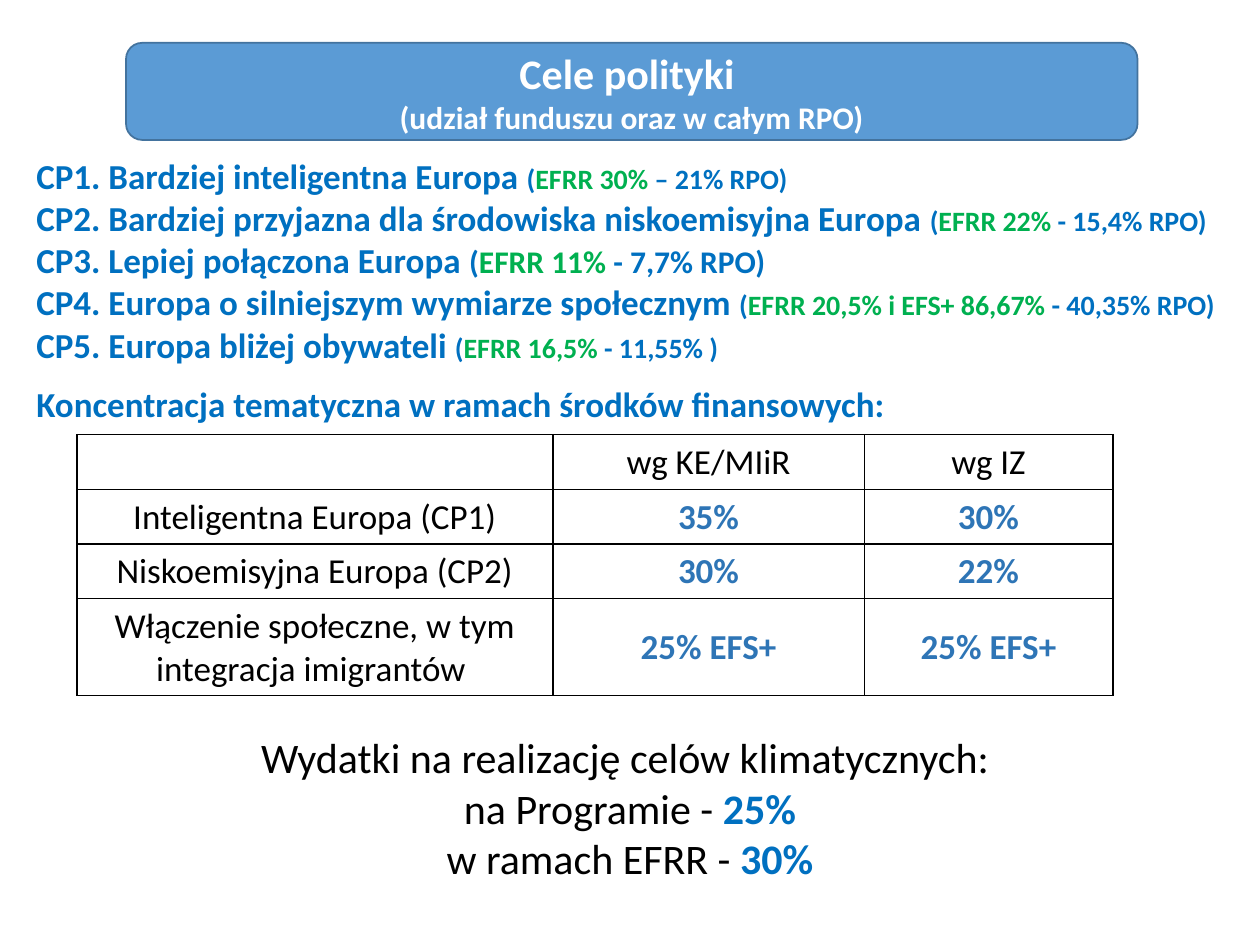
from dataclasses import dataclass

from lxml.etree import SubElement
from pptx import Presentation
from pptx.dml.color import RGBColor
from pptx.enum.shapes import MSO_SHAPE
from pptx.enum.text import MSO_ANCHOR, PP_ALIGN
from pptx.oxml.ns import qn
from pptx.util import Pt


@dataclass(frozen=True)
class Theme:
    """Colours, font and type sizes of the slide."""
    font: str = "Calibri"
    white: str = "FFFFFF"
    black: str = "000000"
    blue: str = "0070C0"
    green: str = "00B050"
    value: str = "2E75B6"
    banner: str = "5B9BD5"
    banner_line: str = "43739E"
    large: int = 24
    body: int = 20
    medium: int = 18
    small: int = 16


T = Theme()

GOALS = [
    ("CP1. Bardziej inteligentna Europa ", "EFRR 30% ", "– 21% RPO)", T.small),
    ("CP2. Bardziej przyjazna dla środowiska niskoemisyjna Europa ",
     "EFRR 22% ", "- 15,4% RPO)", T.small),
    ("CP3. Lepiej połączona Europa ", "EFRR 11% ", "- 7,7% RPO)", T.medium),
    ("CP4. Europa o silniejszym wymiarze społecznym ",
     "EFRR 20,5% i EFS+ 86,67% ", "- 40,35% RPO)", T.small),
    ("CP5. Europa bliżej obywateli ", "EFRR 16,5% ", "- 11,55% )", T.small),
]
CONCENTRATION = [
    ("", "wg KE/MIiR", "wg IZ"),
    ("Inteligentna Europa (CP1)", "35%", "30%"),
    ("Niskoemisyjna Europa (CP2)", "30%", "22%"),
    ("Włączenie społeczne, w tym integracja imigrantów ", "25% EFS+", "25% EFS+"),
]
CLIMATE = [
    ("Wydatki na realizację celów klimatycznych: ", ""),
    ("na Programie - ", "25%"),
    ("w ramach EFRR - ", "30%"),
]


def add_run(p, text, size, color, bold=False):
    """Append one formatted run to a paragraph."""
    r = p.add_run()
    r.text = text
    r.font.name = T.font
    r.font.size = Pt(size)
    r.font.bold = bold
    r.font.color.rgb = RGBColor.from_string(color)


def add_paragraph(tf, first, align):
    """Return the first paragraph of a frame or a new one, aligned."""
    p = tf.paragraphs[0] if first else tf.add_paragraph()
    p.alignment = align
    return p


def add_text_frame(s, box):
    """Add a wrapping text box and return its frame."""
    tf = s.shapes.add_textbox(*map(Pt, box)).text_frame
    tf.word_wrap = True
    return tf


def add_banner(s, box):
    """Draw the rounded title banner."""
    sp = s.shapes.add_shape(MSO_SHAPE.ROUNDED_RECTANGLE, *map(Pt, box))
    sp.shadow.inherit = False
    sp.fill.solid()
    sp.fill.fore_color.rgb = RGBColor.from_string(T.banner)
    sp.line.color.rgb = RGBColor.from_string(T.banner_line)
    sp.line.width = Pt(1)
    tf = sp.text_frame
    tf.vertical_anchor = MSO_ANCHOR.MIDDLE
    lines = [("Cele polityki ", T.large),
             ("(udział funduszu oraz w całym RPO)", T.medium)]
    for i, (text, size) in enumerate(lines):
        p = add_paragraph(tf, i == 0, PP_ALIGN.CENTER)
        add_run(p, text, size, T.white, True)


def add_goals(s, box):
    """List the policy goals, then the heading of the table."""
    tf = add_text_frame(s, box)
    for i, (goal, share, total, size) in enumerate(GOALS):
        p = add_paragraph(tf, i == 0, PP_ALIGN.JUSTIFY)
        add_run(p, goal, T.body, T.blue, True)
        add_run(p, "(", size, T.blue, True)
        add_run(p, share, size, T.green, True)
        add_run(p, total, size, T.blue, True)
    p = add_paragraph(tf, False, PP_ALIGN.JUSTIFY)
    p.space_before = Pt(9.8)
    add_run(p, "Koncentracja tematyczna w ramach środków finansowych:",
            T.body, T.blue, True)


def add_borders(cell):
    """Give a cell a thin black border on all sides."""
    pr = cell._tc.get_or_add_tcPr()
    for i, side in enumerate(("a:lnL", "a:lnR", "a:lnT", "a:lnB")):
        ln = pr.makeelement(qn(side), {"w": str(Pt(1))})
        fill = SubElement(ln, qn("a:solidFill"))
        SubElement(fill, qn("a:srgbClr"), val=T.black)
        pr.insert(i, ln)


def add_concentration_table(s, box):
    """Draw the table of thematic concentration."""
    table = s.shapes.add_table(4, 3, *map(Pt, box)).table
    table.first_row = table.horz_banding = False
    for col, width in zip(table.columns, (272, 178, 142)):
        col.width = Pt(width)
    for row, height in zip(table.rows, (31.2, 31.2, 31.2, 55)):
        row.height = Pt(height)
    for i, texts in enumerate(CONCENTRATION):
        for j, text in enumerate(texts):
            cell = table.cell(i, j)
            cell.fill.background()
            add_borders(cell)
            cell.vertical_anchor = MSO_ANCHOR.MIDDLE if i else MSO_ANCHOR.TOP
            p = add_paragraph(cell.text_frame, True, PP_ALIGN.CENTER)
            p.font.size = Pt(T.body)
            is_value = i > 0 and j > 0
            if text:
                add_run(p, text, T.body, T.value if is_value else T.black, is_value)


def add_climate(s, box):
    """Write the centred lines on climate spending."""
    tf = add_text_frame(s, box)
    for i, (label, share) in enumerate(CLIMATE):
        p = add_paragraph(tf, i == 0, PP_ALIGN.CENTER)
        add_run(p, label, T.large, T.black)
        if share:
            add_run(p, share, T.large, T.blue, True)


def main():
    """Build the slide and save it."""
    prs = Presentation()
    prs.slide_width, prs.slide_height = Pt(720), Pt(540)
    s = prs.slides.add_slide(prs.slide_layouts[6])
    add_banner(s, (72, 24.5, 578, 55.5))
    add_goals(s, (13.7, 85, 698.4, 307.4))
    add_climate(s, (56.9, 414.7, 606.2, 94.3))
    add_concentration_table(s, (43.9, 248.4, 592, 148.6))
    prs.save("out.pptx")


if __name__ == "__main__":
    main()
